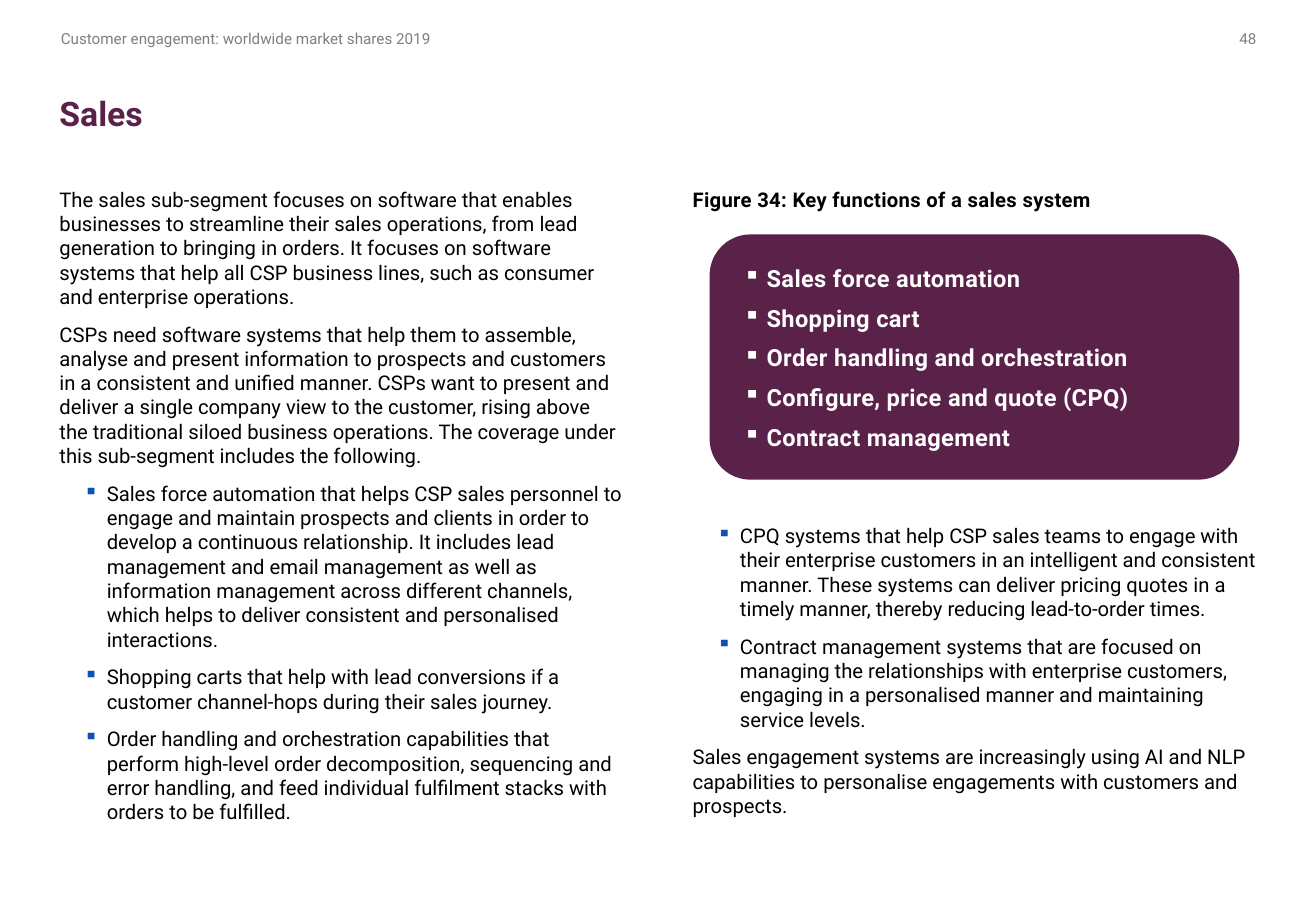
import dataclasses
import typing

import lxml.etree
import pptx
import pptx.dml.color
import pptx.enum.shapes
import pptx.enum.text
import pptx.oxml.ns
import pptx.util

RGB = pptx.dml.color.RGBColor.from_string
Pt = pptx.util.Pt
Anchor = pptx.enum.text.MSO_ANCHOR
Align = pptx.enum.text.PP_ALIGN
Preset = pptx.enum.shapes.MSO_SHAPE

WIDTH, HEIGHT = pptx.util.Inches(10.83), pptx.util.Inches(7.5)


# Theme: colours and type sizes
@dataclasses.dataclass(frozen=True)
class Theme:
    font: str = "Roboto"
    plum: str = "5A2149"
    blue: str = "0F51B1"
    grey: str = "7F7F7F"
    page_grey: str = "808080"
    black: str = "000000"
    white: str = "FFFFFF"
    small: float = 9
    body: float = 12
    function: float = 14
    title: float = 20


THEME = Theme()


@dataclasses.dataclass(frozen=True)
class Style:
    size: float
    color: str
    bold: bool = False
    tracking: int = 0  # hundredths of a point
    bullet: str = ""  # bullet colour
    margin: float = 0  # inches
    hanging: float = 0  # inches
    format: dict[str, typing.Any] = dataclasses.field(default_factory=dict)


@dataclasses.dataclass(frozen=True)
class Area:
    """Left, top, width and height in percent of the slide."""
    left: float
    top: float
    width: float
    height: float


@dataclasses.dataclass(frozen=True)
class Block:
    area: Area
    lines: list[tuple[Style, str]]
    frame: dict[str, typing.Any] = dataclasses.field(default_factory=dict)
    preset: typing.Any = None
    fill: str = ""


# Text styles
AFTER = {"space_after": Pt(8)}
RUNNING = Style(THEME.small, THEME.grey, format=AFTER)
PAGE = Style(THEME.small, THEME.page_grey, format={"alignment": Align.RIGHT})
TITLE = Style(THEME.title, THEME.plum, True, format={"line_spacing": Pt(25)})
BODY = Style(THEME.body, THEME.black, format=AFTER)
ITEM = dataclasses.replace(BODY, bullet=THEME.blue, margin=0.39, hanging=0.19)
CAPTION = dataclasses.replace(BODY, bold=True, tracking=20)
FUNCTION = Style(THEME.function, THEME.white, True, 20, THEME.white, 0.19, 0.19,
                 {"line_spacing": 1.05, "space_after": Pt(6)})

FLUSH = {"margin_left": 0, "margin_right": 0}
MIDDLE = FLUSH | {"vertical_anchor": Anchor.MIDDLE}
ONE_LINE = MIDDLE | {"word_wrap": False}

# Grid: two columns of equal width
LEFT, RIGHT, COLUMN = 4.52, 52.63, 42.94
BODY_TOP = 19.87
HEADER_TOP, HEADER_ROW = 2.13, 4.13

# Content
FUNCTIONS = [
    "Sales force automation",
    "Shopping cart",
    "Order handling and orchestration",
    "Configure, price and quote (CPQ)",
    "Contract management",
]

BLOCKS = [
    Block(Area(4.62, HEADER_TOP, 29.82, HEADER_ROW),
          [(RUNNING, "Customer engagement: worldwide market shares 2019")], ONE_LINE),
    Block(Area(88.55, HEADER_TOP, 6.93, HEADER_ROW), [(PAGE, "48")], ONE_LINE),
    Block(Area(LEFT, 6.8, 90.86, 11.07), [(TITLE, "Sales")], MIDDLE),
    Block(Area(LEFT, BODY_TOP, COLUMN, 70.53), [
        (BODY, "The sales sub-segment focuses on software that enables businesses to "
               "streamline their sales operations, from lead generation to bringing in "
               "orders. It focuses on software systems that help all CSP business lines, "
               "such as consumer and enterprise operations."),
        (BODY, "CSPs need software systems that help them to assemble, analyse and present "
               "information to prospects and customers in a consistent and unified manner. "
               "CSPs want to present and deliver a single company view to the customer, "
               "rising above the traditional siloed business operations. The coverage under "
               "this sub-segment includes the following."),
        (ITEM, "Sales force automation that helps CSP sales personnel to engage and maintain "
               "prospects and clients in order to develop a continuous relationship. It "
               "includes lead management and email management as well as information "
               "management across different channels, which helps to deliver consistent and "
               "personalised interactions."),
        (ITEM, "Shopping carts that help with lead conversions if a customer channel-hops "
               "during their sales journey."),
        (ITEM, "Order handling and orchestration capabilities that perform high-level order "
               "decomposition, sequencing and error handling, and feed individual fulfilment "
               "stacks with orders to be fulfilled."),
    ], FLUSH),
    Block(Area(RIGHT, BODY_TOP, COLUMN, 3.73),
          [(CAPTION, "Figure 34: Key functions of a sales system")], FLUSH),
    Block(Area(RIGHT, 56.8, COLUMN, 33.6), [
        (ITEM, "CPQ systems that help CSP sales teams to engage with their enterprise "
               "customers in an intelligent and consistent manner. These systems can deliver "
               "pricing quotes in a timely manner, thereby reducing lead-to-order times."),
        (ITEM, "Contract management systems that are focused on managing the relationships "
               "with enterprise customers, engaging in a personalised manner and maintaining "
               "service levels."),
        (BODY, "Sales engagement systems are increasingly using AI and NLP capabilities to "
               "personalise engagements with customers and prospects."),
    ], FLUSH),
    Block(Area(53.92, 25.73, 40.26, 26.93), [],
          preset=Preset.ROUNDED_RECTANGLE, fill=THEME.plum),
    Block(Area(55.59, 28.13, 37.21, 22.13), [(FUNCTION, name) for name in FUNCTIONS],
          preset=Preset.RECTANGLE, fill=THEME.plum),
]


def apply(target: typing.Any, values: dict[str, typing.Any]) -> None:
    for name, value in values.items():
        setattr(target, name, value)


def add_bullet(properties: typing.Any, color: str) -> None:
    tag = pptx.oxml.ns.qn
    bullet_color = lxml.etree.SubElement(properties, tag("a:buClr"))
    lxml.etree.SubElement(bullet_color, tag("a:srgbClr"), val=color)
    lxml.etree.SubElement(properties, tag("a:buChar"), char="▪")


def write_line(paragraph: typing.Any, style: Style, text: str) -> None:
    properties = paragraph._p.get_or_add_pPr()
    properties.set("marL", str(int(pptx.util.Inches(style.margin))))
    properties.set("indent", str(int(pptx.util.Inches(-style.hanging))))
    if style.bullet:
        add_bullet(properties, style.bullet)
    apply(paragraph, {"alignment": Align.LEFT} | style.format)
    run = paragraph.add_run()
    run.text = text
    apply(run.font, {"name": THEME.font, "size": Pt(style.size), "bold": style.bold})
    run.font.color.rgb = RGB(style.color)
    if style.tracking:
        run._r.get_or_add_rPr().set("spc", str(style.tracking))


def draw_block(slide: typing.Any, block: Block) -> None:
    area = block.area
    place = [round(share * side / 100) for share, side in (
        (area.left, WIDTH), (area.top, HEIGHT), (area.width, WIDTH), (area.height, HEIGHT))]
    if block.preset is None:
        shape = slide.shapes.add_textbox(*place)
    else:
        shape = slide.shapes.add_shape(block.preset, *place)
        shape.shadow.inherit = False
        shape.fill.solid()
        shape.fill.fore_color.rgb = RGB(block.fill)
        shape.line.fill.background()
    frame = shape.text_frame
    apply(frame, {"word_wrap": True, "vertical_anchor": Anchor.TOP} | block.frame)
    for index, (style, text) in enumerate(block.lines):
        write_line(frame.add_paragraph() if index else frame.paragraphs[0], style, text)


def main() -> None:
    deck = pptx.Presentation()
    apply(deck, {"slide_width": WIDTH, "slide_height": HEIGHT})
    slide = deck.slides.add_slide(deck.slide_layouts[6])
    for block in BLOCKS:
        draw_block(slide, block)
    deck.save("out.pptx")


if __name__ == "__main__":
    main()
